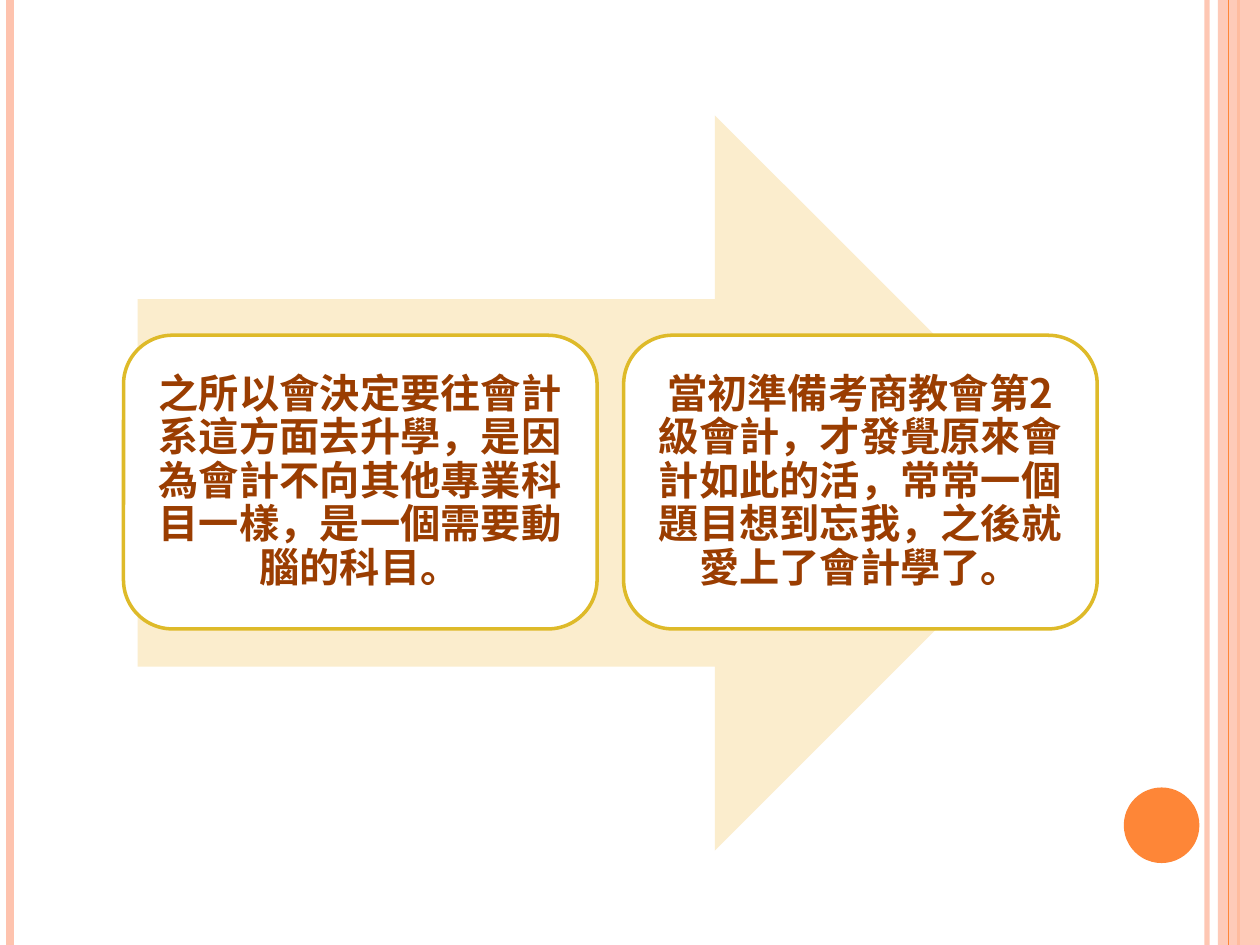
"""Build a slide with two text cards on a wide arrow, framed by side stripes."""
from dataclasses import dataclass

from lxml import etree
from pptx import Presentation
from pptx.dml import color as c
from pptx.enum import shapes as s, text as t
from pptx.oxml import ns
from pptx.util import Pt


@dataclass(frozen=True)
class Theme:
    stripe: str = "FEC3AE"
    accent: str = "FE8637"
    arrow: str = "FBEDCD"
    card: str = "FFFFFF"
    border: str = "DEBA29"
    body: str = "9A3D01"
    font: str = "Noto Sans CJK SC"
    body_size: float = 23


THEME = Theme()
SLIDE_WIDTH, SLIDE_HEIGHT = 720, 540
CARD_LEFT, CARD_TOP, CARD_WIDTH, CARD_HEIGHT, CARD_PITCH = 70.6, 191.6, 270.6, 167.8, 285.8
CARD_TEXTS = (
    "之所以會決定要往會計系這方面去升學，是因為會計不向其他專業科目一樣，是一個需要動腦的科目。",
    "當初準備考商教會第2級會計，才發覺原來會計如此的活，常常一個題目想到忘我，之後就愛上了會計學了。",
)


def paint(color_format, color, opacity=100):
    color_format.rgb = c.RGBColor.from_string(color)
    if opacity < 100:
        for element in color_format._xFill.iter(ns.qn("a:srgbClr")):
            etree.SubElement(element, ns.qn("a:alpha"), val=str(opacity * 1000))


def add_stripe(slide, x, color, width, opacity=100):
    line = slide.shapes.add_connector(
        s.MSO_CONNECTOR.STRAIGHT, Pt(x), Pt(0), Pt(x), Pt(SLIDE_HEIGHT)
    )
    line.line.width = Pt(width)
    line.line.fill.solid()
    line.line.color.rgb = c.RGBColor.from_string(color)
    if opacity < 100:
        element = line.line._ln.find(".//" + ns.qn("a:srgbClr"))
        etree.SubElement(element, ns.qn("a:alpha"), val=str(opacity * 1000))
    etree.SubElement(line._element.spPr, ns.qn("a:effectLst"))


def add_shape(slide, kind, box, fill, border=None, opacity=100):
    shape = slide.shapes.add_shape(kind, *map(Pt, box))
    shape.shadow.inherit = False
    shape.fill.solid()
    shape.fill.fore_color.rgb = c.RGBColor.from_string(fill)
    if opacity < 100:
        element = shape._element.spPr.find(".//" + ns.qn("a:srgbClr"))
        etree.SubElement(element, ns.qn("a:alpha"), val=str(opacity * 1000))
    if border:
        shape.line.color.rgb = c.RGBColor.from_string(border)
        shape.line.width = Pt(2)
    else:
        shape.line.fill.background()
    return shape


def write_text(shape, text, *, size, color, bold=False, inset=7.2, spacing=0.9):
    frame = shape.text_frame
    frame.word_wrap = True
    frame.vertical_anchor = t.MSO_ANCHOR.MIDDLE
    frame.margin_left = frame.margin_right = Pt(inset)
    frame.margin_top = frame.margin_bottom = Pt(inset)
    paragraph = frame.paragraphs[0]
    paragraph.alignment = t.PP_ALIGN.CENTER
    paragraph.line_spacing = spacing
    run = paragraph.add_run()
    run.text = text
    run.font.size, run.font.bold, run.font.name = Pt(size), bold, THEME.font
    run.font.color.rgb = c.RGBColor.from_string(color)
    etree.SubElement(run.font._element, ns.qn("a:ea"), typeface=THEME.font)


def add_frame(slide):
    add_stripe(slide, 689.8, THEME.stripe, 3, opacity=93)
    add_stripe(slide, 5.8, THEME.stripe, 4.5)
    add_stripe(slide, 707.8, THEME.accent, 1.5)
    band = (696, 0, SLIDE_WIDTH - 696, SLIDE_HEIGHT)
    add_shape(slide, s.MSO_SHAPE.RECTANGLE, band, THEME.stripe, opacity=87)
    add_stripe(slide, 702, THEME.accent, 0.75)
    add_shape(slide, s.MSO_SHAPE.OVAL, (642.2, 450, 43.2, 43.2), THEME.accent)


def add_card(slide, index, text):
    box = (CARD_LEFT + index * CARD_PITCH, CARD_TOP, CARD_WIDTH, CARD_HEIGHT)
    card = add_shape(slide, s.MSO_SHAPE.ROUNDED_RECTANGLE, box, THEME.card, THEME.border)
    write_text(card, text, size=THEME.body_size, color=THEME.body, bold=True)


def main():
    presentation = Presentation()
    presentation.slide_width, presentation.slide_height = Pt(SLIDE_WIDTH), Pt(SLIDE_HEIGHT)
    slide = presentation.slides.add_slide(presentation.slide_layouts[6])
    add_frame(slide)
    add_shape(slide, s.MSO_SHAPE.RIGHT_ARROW, (78.6, 66, 540, 420), THEME.arrow)
    for index, text in enumerate(CARD_TEXTS):
        add_card(slide, index, text)
    presentation.save("out.pptx")


if __name__ == "__main__":
    main()
